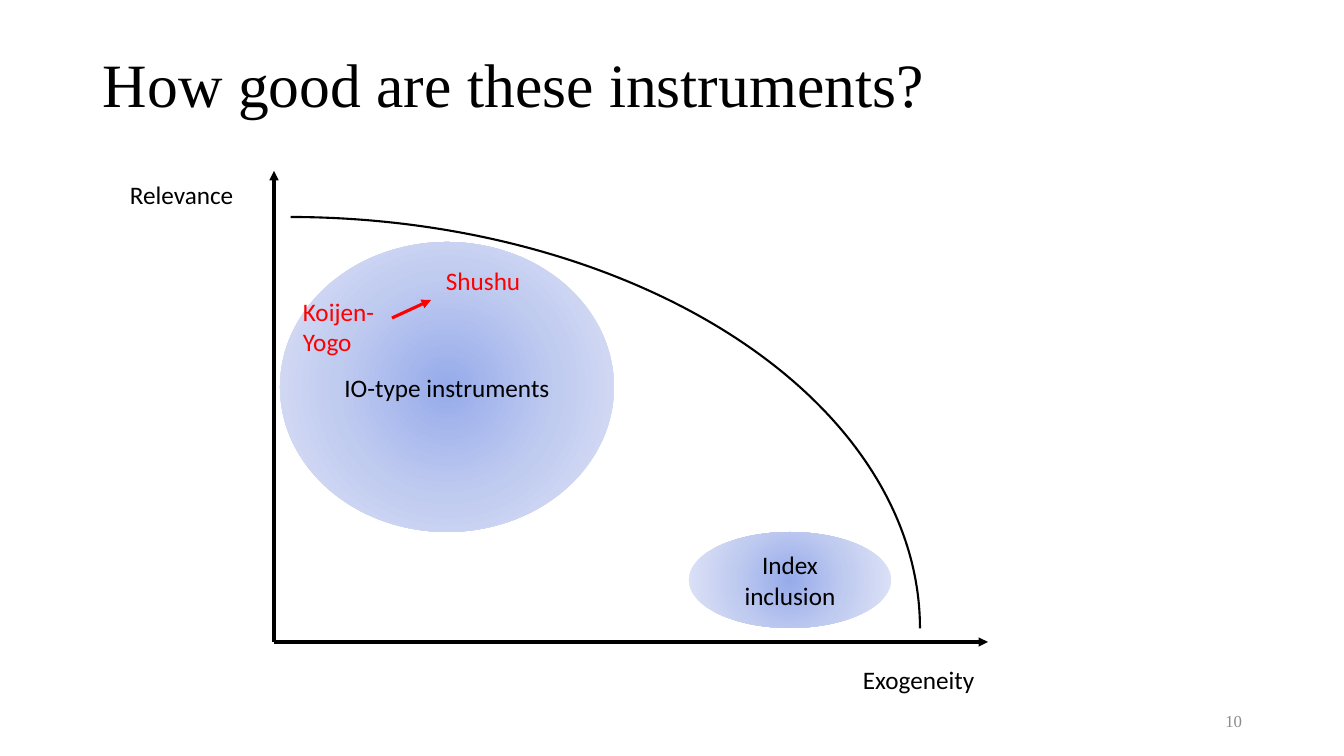
from pptx import Presentation
from pptx.dml.color import RGBColor
from pptx.enum.shapes import MSO_CONNECTOR, MSO_SHAPE
from pptx.enum.text import MSO_ANCHOR, PP_ALIGN
from pptx.oxml import parse_xml
from pptx.oxml.ns import nsdecls, qn
from pptx.util import Pt

BLACK = RGBColor(0, 0, 0)
RED = RGBColor(255, 0, 0)
GRAY = RGBColor(0x8C, 0x8C, 0x8C)
STOPS = [
    (0, RGBColor(0x96, 0xAB, 0xEA)),
    (50, RGBColor(0xC0, 0xCB, 0xF0)),
    (100, RGBColor(0xE0, 0xE5, 0xF7)),
]
SERIF = "Times New Roman"
SANS = "Calibri"


def px(*sizes):
    return [round(size * 914400 / 100.8) for size in sizes]


def write(shape, text, size, font, color, anchor, align):
    frame = shape.text_frame
    frame.word_wrap = True
    frame.vertical_anchor = anchor
    para = frame.paragraphs[0]
    para.text = text
    para.alignment = align
    para.font.size = Pt(size)
    para.font.name = font
    para.font.color.rgb = color
    return para


deck = Presentation()
deck.slide_width, deck.slide_height = px(1344, 756)
slide = deck.slides.add_slide(deck.slide_layouts[6])
shapes = slide.shapes

title = shapes.add_textbox(*px(93, 15, 1159, 146))
head = write(title, "How good are these instruments?", 44, SERIF, BLACK,
             MSO_ANCHOR.MIDDLE, PP_ALIGN.LEFT)
head.line_spacing = 0.9

number = shapes.add_textbox(*px(950, 701, 302, 40))
write(number, "10", 12, SERIF, GRAY, MSO_ANCHOR.MIDDLE, PP_ALIGN.RIGHT)

curve = shapes.add_shape(MSO_SHAPE.ARC, *px(-343, 217, 1263, 823))
curve.adjustments[0] = 162.18
curve.adjustments[1] = 0
curve.shadow.inherit = False
curve.fill.background()
curve.line.color.rgb = BLACK
curve.line.width = Pt(1.5)

stops = "".join(
    f'<a:gs pos="{place * 1000}"><a:srgbClr val="{color}"/></a:gs>'
    for place, color in STOPS
)
glow = (
    f'<a:gradFill {nsdecls("a")} rotWithShape="1"><a:gsLst>{stops}</a:gsLst>'
    '<a:path path="circle"><a:fillToRect l="50000" t="50000" r="50000" b="50000"/>'
    '</a:path></a:gradFill>'
)
for text, box in [
    ("Index inclusion", (689, 532, 202, 96)),
    ("IO-type instruments", (280, 242, 334, 290)),
]:
    oval = shapes.add_shape(MSO_SHAPE.OVAL, *px(*box))
    oval.shadow.inherit = False
    oval.line.fill.background()
    oval.fill.gradient()
    props = oval._element.spPr
    props.replace(props.find(qn("a:gradFill")), parse_xml(glow))
    write(oval, text, 18, SANS, BLACK, MSO_ANCHOR.MIDDLE, PP_ALIGN.CENTER)

for text, box, color in [
    ("Relevance", (120, 174, 135, 40), BLACK),
    ("Exogeneity", (853, 659, 135, 40), BLACK),
    ("Koijen-Yogo", (293, 291, 105, 74), RED),
    ("Shushu", (436, 260, 105, 40), RED),
]:
    label = shapes.add_textbox(*px(*box))
    write(label, text, 18, SANS, color, MSO_ANCHOR.TOP, PP_ALIGN.LEFT)

for ends, color in [
    ((274, 642, 274, 171), BLACK),
    ((274, 642, 988, 642), BLACK),
    ((392, 318, 431, 300), RED),
]:
    arrow = shapes.add_connector(MSO_CONNECTOR.STRAIGHT, *px(*ends))
    arrow.line.color.rgb = color
    arrow.line.width = Pt(2.25)
    props = arrow._element.spPr
    tip = parse_xml(f'<a:tailEnd {nsdecls("a")} type="triangle"/>')
    props.find(qn("a:ln")).append(tip)
    props.append(parse_xml(f'<a:effectLst {nsdecls("a")}/>'))

deck.save("out.pptx")
